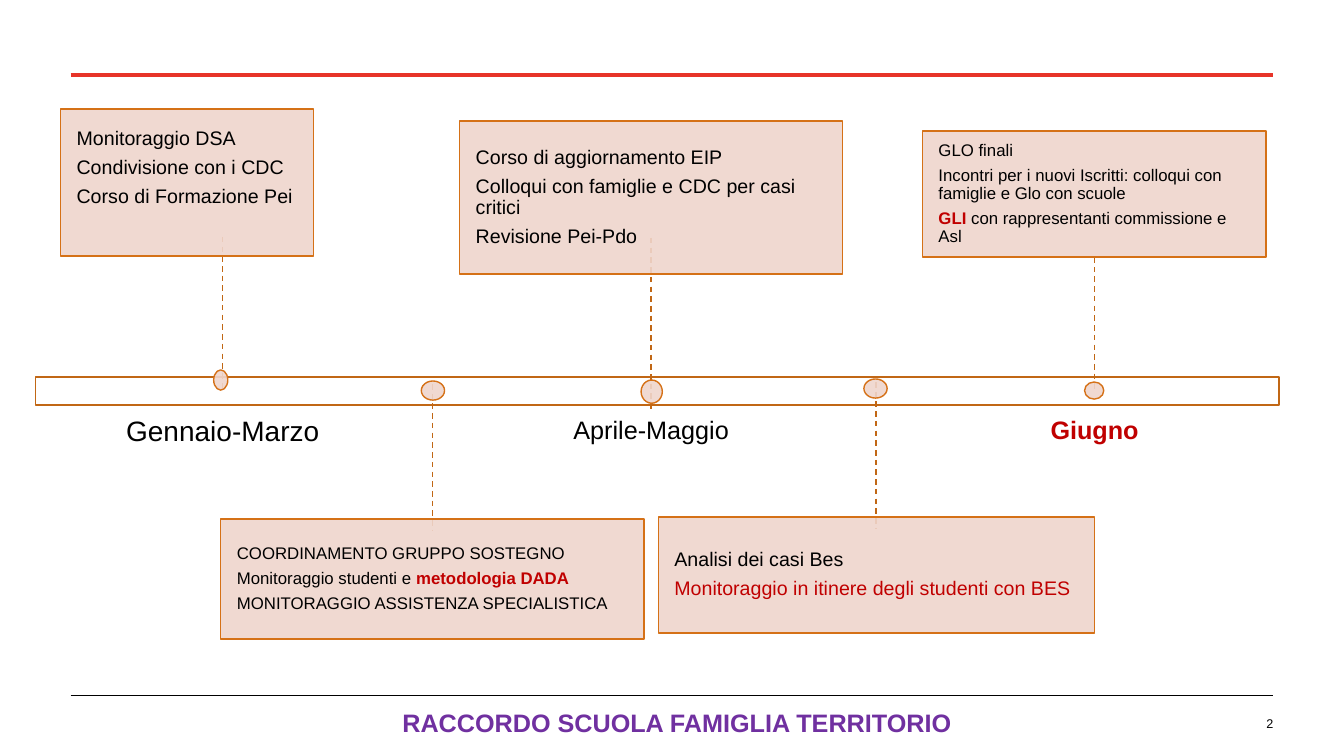
"""Build a one-slide school timeline with five activity boxes."""
import pptx
import pptx.util
import pptx.dml.color
import pptx.enum.dml
import pptx.enum.shapes
import pptx.enum.text
from lxml import etree

WIDTH, HEIGHT = pptx.util.Inches(13.333), pptx.util.Inches(7.5)
BLACK, RED, PURPLE = "000000", "C00000", "7030A0"
BOX_FILL, BOX_EDGE, AXIS_EDGE, TOP_RULE = "EFD5CC", "D57117", "C16715", "E73429"
RULES = [(9.87, TOP_RULE, 3), (92, BLACK, 0.5)]
RULE_LEFT, RULE_RIGHT = 5.25, 94.73
AXIS = (2.63, 49.87, 92.55, 3.73)
PERIOD_TOP, PERIOD_WIDTH, PERIOD_HEIGHT = 55.2, 21.98, 10.53
PAGE_NUMBER = ("2", (87.83, 94, 7.65, 4.53))
FOOTER = ("RACCORDO SCUOLA FAMIGLIA TERRITORIO", (5.48, 92.93, 89.78, 5.33))

STAGES = [
    {"box": (4.5, 14.4, 18.83, 19.47), "stem": (16.58, 31.33, 51.6),
     "dot": (15.9, 48.93, 1.05, 2.67), "size": 14, "insets": (0.16, 0.08, 0.16, 0.36),
     "period": ("Gennaio-Marzo", 20, BLACK, False),
     "lines": ["Monitoraggio DSA", "Condivisione con i CDC", "Corso di Formazione Pei"]},
    {"box": (16.43, 68.67, 31.5, 15.87), "stem": (32.18, 50.8, 70.27),
     "dot": (31.35, 50.4, 1.73, 2.53), "size": 12, "insets": (0.16, 0.06, 0.16, 0.06),
     "lines": ["COORDINAMENTO GRUPPO SOSTEGNO",
               [("Monitoraggio studenti e ", BLACK, False), ("metodologia DADA", RED, True)],
               "MONITORAGGIO ASSISTENZA SPECIALISTICA"]},
    {"box": (34.2, 16, 28.5, 20.27), "stem": (48.45, 31.47, 54.27),
     "dot": (47.7, 50.27, 1.58, 3.07), "size": 14, "insets": (0.16, 0.07, 0.16, 0.07),
     "period": ("Aprile-Maggio", 18, BLACK, False),
     "lines": ["Corso di aggiornamento EIP",
               "Colloqui con famiglie e CDC per casi critici", "Revisione Pei-Pdo"]},
    {"box": (48.98, 68.4, 32.48, 15.33), "stem": (65.18, 50.53, 70),
     "dot": (64.28, 50.13, 1.73, 2.53), "size": 14, "insets": (0.16, 0.06, 0.16, 0.06),
     "lines": ["Analisi dei casi Bes",
               [("Monitoraggio in itinere degli studenti con BES", RED, False)]]},
    {"box": (68.63, 17.33, 25.58, 16.67), "stem": (81.45, 34, 51.73),
     "dot": (80.7, 50.53, 1.43, 2.27), "size": 12, "insets": (0.16, 0.07, 0.16, 0.07),
     "period": ("Giugno", 18, RED, True),
     "lines": ["GLO finali",
               "Incontri per i nuovi Iscritti: colloqui con famiglie e Glo con scuole",
               [("GLI ", RED, True), ("con rappresentanti commissione e Asl", BLACK, False)]]},
]

ALIGN = pptx.enum.text.PP_ALIGN
ANCHOR = pptx.enum.text.MSO_ANCHOR
PRESET = pptx.enum.shapes.MSO_SHAPE


def across(share):
    return int(WIDTH * share / 100)


def down(share):
    return int(HEIGHT * share / 100)


def place(area):
    left, top, width, height = area
    return across(left), down(top), across(width), down(height)


def paint(target, color):
    target.rgb = pptx.dml.color.RGBColor.from_string(color)


def write(holder, lines, size, color=BLACK, bold=False, align=ALIGN.LEFT,
          anchor=ANCHOR.TOP, insets=(0.1, 0.05, 0.1, 0.05), leading=1, gap=0):
    frame = holder.text_frame
    frame.word_wrap = True
    frame.vertical_anchor = anchor
    (frame.margin_left, frame.margin_top,
     frame.margin_right, frame.margin_bottom) = map(pptx.util.Inches, insets)
    for index, line in enumerate(lines):
        paragraph = frame.add_paragraph() if index else frame.paragraphs[0]
        paragraph.alignment = align
        paragraph.line_spacing = leading
        paragraph.space_after = pptx.util.Pt(gap)
        pieces = [(line, color, bold)] if isinstance(line, str) else line
        for words, ink, heavy in pieces:
            run = paragraph.add_run()
            run.text = words
            run.font.name = "Arial"
            run.font.size = pptx.util.Pt(size)
            run.font.bold = heavy
            paint(run.font.color, ink)


def draw_shape(slide, preset, area, fill, edge, opacity=100):
    shape = slide.shapes.add_shape(preset, *place(area))
    shape.shadow.inherit = False
    shape.fill.solid()
    paint(shape.fill.fore_color, fill)
    if opacity < 100:
        tint = shape.fill._xPr.find(".//" + pptx.oxml.ns.qn("a:srgbClr"))
        etree.SubElement(tint, pptx.oxml.ns.qn("a:alpha"), val=str(opacity * 1000))
    paint(shape.line.color, edge)
    shape.line.width = pptx.util.Pt(1)
    return shape


def draw_line(slide, start, end, color, weight, dashed=False):
    line = slide.shapes.add_connector(
        pptx.enum.shapes.MSO_CONNECTOR.STRAIGHT,
        across(start[0]), down(start[1]), across(end[0]), down(end[1]))
    paint(line.line.color, color)
    line.line.width = pptx.util.Pt(weight)
    if dashed:
        line.line.dash_style = pptx.enum.dml.MSO_LINE.DASH
    etree.SubElement(line._element.spPr, pptx.oxml.ns.qn("a:effectLst"))


def draw_stage(slide, stage):
    x, top, bottom = stage["stem"]
    draw_line(slide, (x, top), (x, bottom), AXIS_EDGE, 1, dashed=True)
    box = draw_shape(slide, PRESET.RECTANGLE, stage["box"], BOX_FILL, BOX_EDGE, 90)
    write(box, stage["lines"], stage["size"], anchor=ANCHOR.MIDDLE,
          insets=stage["insets"], leading=0.9, gap=round(stage["size"] * 0.4, 1))
    if "period" in stage:
        months, size, color, bold = stage["period"]
        area = (x - PERIOD_WIDTH / 2, PERIOD_TOP, PERIOD_WIDTH, PERIOD_HEIGHT)
        write(slide.shapes.add_textbox(*place(area)), [months], size, color=color,
              bold=bold, align=ALIGN.CENTER, insets=(0, 0, 0, 0), leading=0.9)
    draw_shape(slide, PRESET.OVAL, stage["dot"], BOX_FILL, BOX_EDGE, 90)


def main():
    deck = pptx.Presentation()
    deck.slide_width, deck.slide_height = WIDTH, HEIGHT
    slide = deck.slides.add_slide(deck.slide_layouts[6])
    for y, color, weight in RULES:
        draw_line(slide, (RULE_LEFT, y), (RULE_RIGHT, y), color, weight)
    draw_shape(slide, PRESET.RECTANGLE, AXIS, "FFFFFF", AXIS_EDGE)
    for stage in STAGES:
        draw_stage(slide, stage)
    number, area = PAGE_NUMBER
    write(slide.shapes.add_textbox(*place(area)), [number], 9, align=ALIGN.RIGHT)
    title, area = FOOTER
    write(slide.shapes.add_textbox(*place(area)), [title], 18, color=PURPLE,
          bold=True, align=ALIGN.CENTER)
    deck.save("out.pptx")


if __name__ == "__main__":
    main()
